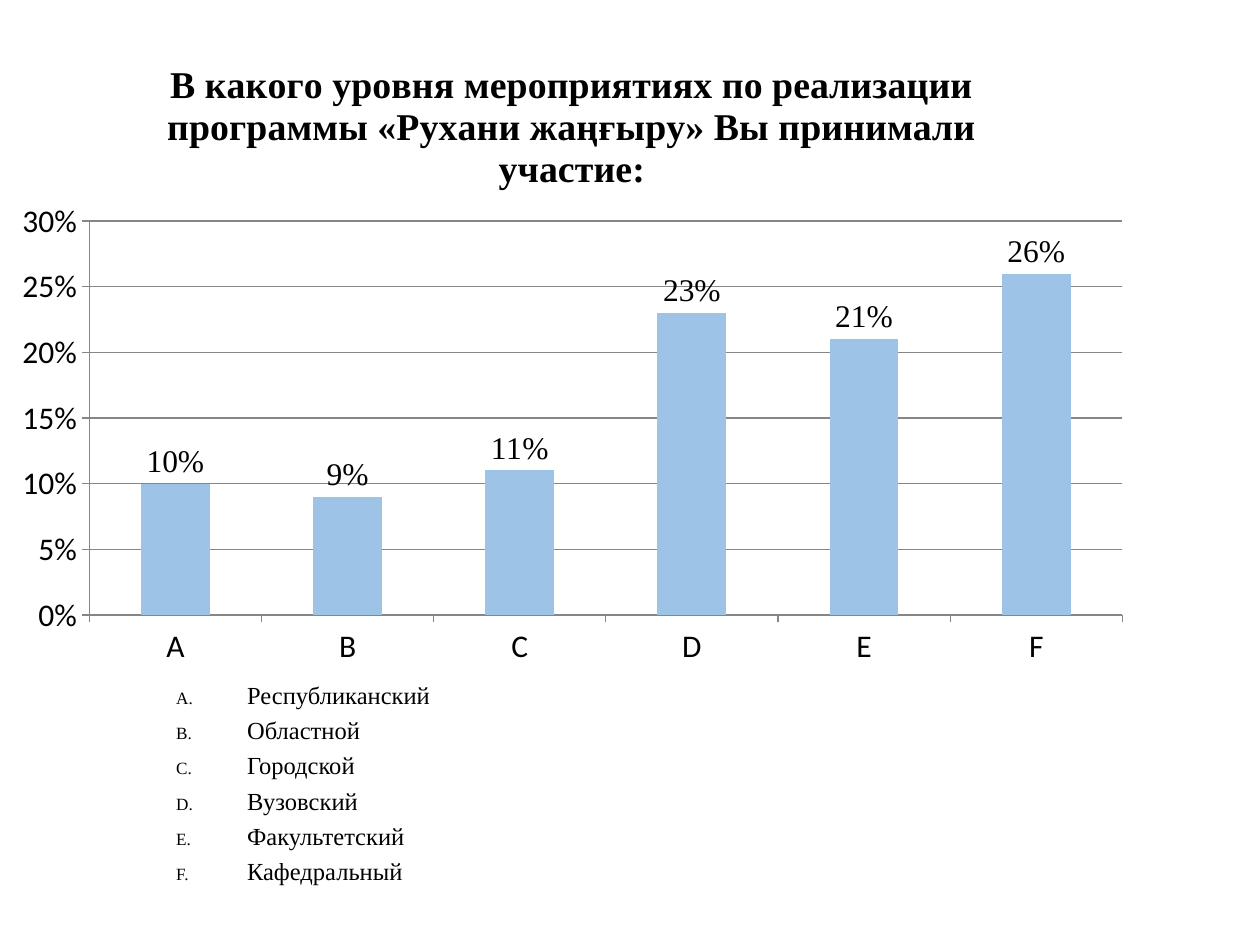
import pptx
import pptx.chart.data
import pptx.dml.color
import pptx.enum.chart
import pptx.enum.text
import pptx.oxml
import pptx.oxml.ns
import pptx.util

Pt = pptx.util.Pt
qn = pptx.oxml.ns.qn

QUESTION = ("В какого уровня мероприятиях по реализации программы "
            "«Рухани жаңғыру» Вы принимали участие:")
LEVELS = [
    ("A", "Республиканский", 0.10),
    ("B", "Областной", 0.09),
    ("C", "Городской", 0.11),
    ("D", "Вузовский", 0.23),
    ("E", "Факультетский", 0.21),
    ("F", "Кафедральный", 0.26),
]
SERIF, SANS = "Times New Roman", "Calibri"
BLACK, GRAY, BLUE = "000000", "868686", "9DC3E6"


def rgb(value):
    return pptx.dml.color.RGBColor.from_string(value)


def style_font(font, name, size, bold=False, color=BLACK):
    font.name, font.size, font.bold = name, Pt(size), bold
    font.color.rgb = rgb(color)


def write(paragraph, text, name=SERIF, size=14, bold=False, before=0):
    paragraph.space_before = Pt(before)
    run = paragraph.add_run()
    run.text = text
    style_font(run.font, name, size, bold)


def add_letter(paragraph):
    properties = paragraph._p.get_or_add_pPr()
    properties.set("marL", str(Pt(40.5)))
    properties.set("indent", str(-Pt(40.5)))
    for tag, key, value in (("buSzPct", "val", "70000"),
                            ("buFont", "typeface", SERIF),
                            ("buAutoNum", "type", "alphaUcPeriod")):
        item = pptx.oxml.parse_xml(f'<a:{tag} {pptx.oxml.ns.nsdecls("a")} {key}="{value}"/>')
        properties.append(item)


def place(parent, after, inner=False, **fractions):
    for old in parent.findall(qn("c:layout")):
        parent.remove(old)
    target = '<c:layoutTarget val="inner"/>' if inner else ""
    modes = "".join(f'<c:{key}Mode val="edge"/>' for key in "xy")
    values = "".join(f'<c:{key} val="{value}"/>' for key, value in fractions.items())
    layout = pptx.oxml.parse_xml(
        f'<c:layout {pptx.oxml.ns.nsdecls("c")}><c:manualLayout>'
        f'{target}{modes}{values}</c:manualLayout></c:layout>')
    parent.insert(after, layout)


def add_levels_chart(slide):
    data = pptx.chart.data.CategoryChartData(number_format="0%")
    data.categories = [letter for letter, _, _ in LEVELS]
    data.add_series(QUESTION, [share for _, _, share in LEVELS])
    chart = slide.shapes.add_chart(
        pptx.enum.chart.XL_CHART_TYPE.COLUMN_CLUSTERED,
        Pt(0), Pt(11.5), Pt(654.5), Pt(376.5), data).chart
    chart.has_legend = False
    style_font(chart.font, SANS, 18)

    chart.has_title = True
    write(chart.chart_title.text_frame.paragraphs[0], QUESTION, size=21.6, bold=True)
    chart.chart_title.include_in_layout = False
    place(chart.chart_title._element, 1, x=0.14, y=0.05)
    plot_area = chart._chartSpace.chart.plotArea
    place(plot_area, 0, inner=True, x=0.078, y=0.305, w=0.902, h=0.598)

    shares = chart.value_axis
    shares.minimum_scale, shares.maximum_scale, shares.major_unit = 0, 0.3, 0.05
    shares.has_major_gridlines = True
    shares.tick_labels.number_format = "0%"
    shares.tick_labels.number_format_is_linked = False
    shares.major_gridlines.format.line.color.rgb = rgb(GRAY)
    shares.major_gridlines.format.line.width = Pt(0.75)
    for axis in (chart.category_axis, shares):
        axis.major_tick_mark = pptx.enum.chart.XL_TICK_MARK.OUTSIDE
        axis.format.line.color.rgb = rgb(GRAY)
        axis.format.line.width = Pt(0.75)
        style_font(axis.tick_labels.font, SANS, 18)

    columns = chart.plots[0]
    columns.gap_width = 150
    columns.vary_by_categories = False
    fill = columns.series[0].format.fill
    fill.solid()
    fill.fore_color.rgb = rgb(BLUE)
    columns.has_data_labels = True
    labels = columns.data_labels
    labels.show_value = True
    labels.number_format = "0%"
    labels.number_format_is_linked = False
    labels.position = pptx.enum.chart.XL_LABEL_POSITION.OUTSIDE_END
    style_font(labels.font, SERIF, 18)


def add_levels_list(slide):
    levels = slide.placeholders[1]
    levels.left, levels.top, levels.width, levels.height = Pt(93.5), Pt(385), Pt(513.5), Pt(106)
    frame = levels.text_frame
    frame.word_wrap = True
    frame.auto_size = pptx.enum.text.MSO_AUTO_SIZE.NONE
    frame.vertical_anchor = pptx.enum.text.MSO_ANCHOR.TOP
    for index, (_, level, _) in enumerate(LEVELS):
        paragraph = frame.add_paragraph() if index else frame.paragraphs[0]
        add_letter(paragraph)
        write(paragraph, level, before=3.3 if index else 0)


def main():
    deck = pptx.Presentation()
    deck.slide_width, deck.slide_height = Pt(720), Pt(540)
    slide = deck.slides.add_slide(deck.slide_layouts[1])
    heading = slide.shapes.title._element
    heading.getparent().remove(heading)
    add_levels_chart(slide)
    add_levels_list(slide)
    deck.save("out.pptx")


if __name__ == "__main__":
    main()
